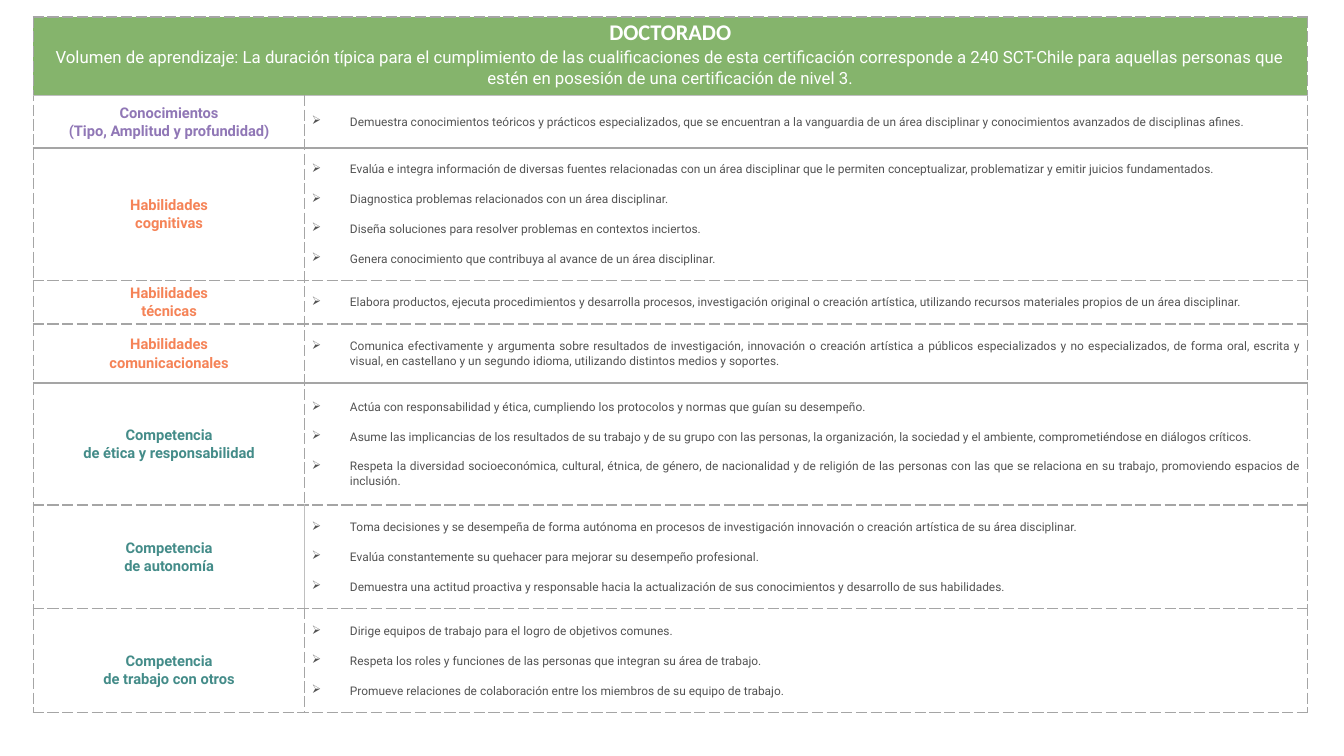
import lxml.etree
import pptx
import pptx.dml.color
import pptx.enum.text
import pptx.oxml.ns
import pptx.util

Pt = pptx.util.Pt
ALIGN = pptx.enum.text.PP_ALIGN
ANCHOR = pptx.enum.text.MSO_ANCHOR
qn = pptx.oxml.ns.qn

COLORS = {
    "header": "85B46C", "white": "FFFFFF", "text": "525252",
    "line": "A5A5A5", "pale_line": "BFBFBF",
    "knowledge": "9077B6", "skill": "F58357", "competence": "448C89",
}
# Colour name, width in points, dash
DASHED = ("line", 1, "dash")
STRONG = ("line", 1.5, "solid")
PALE = ("pale_line", 1, "solid")

HEADER_HEIGHT = 56.1
HEADER_TITLE = "DOCTORADO"
HEADER_TEXT = (
    "Volumen de aprendizaje: La duración típica para el cumplimiento de las cualificaciones "
    "de esta certificación corresponde a 240 SCT-Chile para aquellas personas que estén en "
    "posesión de una certificación de nivel 3."
)
# Height, label colour, label lines, statements, divider, bottom border, label top margin
ROWS = [
    (37.2, "knowledge", ["Conocimientos", "(Tipo, Amplitud y profundidad)"], [
        "Demuestra conocimientos teóricos y prácticos especializados, que se encuentran a la "
        "vanguardia de un área disciplinar y conocimientos avanzados de disciplinas afines.",
    ], DASHED, STRONG, 0),
    (94.6, "skill", ["Habilidades", "cognitivas"], [
        "Evalúa e integra información de diversas fuentes relacionadas con un área disciplinar "
        "que le permiten conceptualizar, problematizar y emitir juicios fundamentados.",
        "Diagnostica problemas relacionados con un área disciplinar.",
        "Diseña soluciones para resolver problemas en contextos inciertos.",
        "Genera conocimiento que contribuya al avance de un área disciplinar.",
    ], DASHED, DASHED, 0),
    (31.4, "skill", ["Habilidades", "técnicas"], [
        "Elabora productos, ejecuta procedimientos y desarrolla procesos, investigación original "
        "o creación artística, utilizando recursos materiales propios de un área disciplinar.",
    ], DASHED, DASHED, 0),
    (42.1, "skill", ["Habilidades", "comunicacionales"], [
        "Comunica efectivamente y argumenta sobre resultados de investigación, innovación o "
        "creación artística a públicos especializados y no especializados, de forma oral, "
        "escrita y visual, en castellano y un segundo idioma, utilizando distintos medios y "
        "soportes.",
    ], DASHED, STRONG, 0),
    (87.2, "competence", ["Competencia", "de ética y responsabilidad"], [
        "Actúa con responsabilidad y ética, cumpliendo los protocolos y normas que guían su "
        "desempeño.",
        "Asume las implicancias de los resultados de su trabajo y de su grupo con las personas, "
        "la organización, la sociedad y el ambiente, comprometiéndose en diálogos críticos.",
        "Respeta la diversidad socioeconómica, cultural, étnica, de género, de nacionalidad y de "
        "religión de las personas con las que se relaciona en su trabajo, promoviendo espacios "
        "de inclusión.",
    ], DASHED, DASHED, 0),
    (73.9, "competence", ["Competencia", "de autonomía"], [
        "Toma decisiones y se desempeña de forma autónoma en procesos de investigación "
        "innovación o creación artística de su área disciplinar.",
        "Evalúa constantemente su quehacer para mejorar su desempeño profesional.",
        "Demuestra una actitud proactiva y responsable hacia la actualización de sus "
        "conocimientos y desarrollo de sus habilidades.",
    ], PALE, DASHED, 0),
    (74.6, "competence", ["Competencia", "de trabajo con otros"], [
        "Dirige equipos de trabajo para el logro de objetivos comunes.",
        "Respeta los roles y funciones de las personas que integran su área de trabajo.",
        "Promueve relaciones de colaboración entre los miembros de su equipo de trabajo.",
    ], DASHED, DASHED, 13),
]


class SlideBuilder:
    def __init__(self, slide):
        self.slide = slide
        self.font = "Roboto"
        self.line_spacing = 1.07
        self.statement_gap = 10.6
        self.bullet_indent = 27.2

    def table(self, left, top, widths, heights):
        frame = self.slide.shapes.add_table(
            len(heights), len(widths), Pt(left), Pt(top), Pt(sum(widths)), Pt(sum(heights)))
        table = frame.table
        table.first_row = table.horz_banding = False
        for column, width in zip(table.columns, widths):
            column.width = Pt(width)
        for row, height in zip(table.rows, heights):
            row.height = Pt(height)
        return table

    def cell(self, cell, borders, margin, top_margin=0, fill=None, anchor=ANCHOR.MIDDLE):
        """Style a cell; borders come in the order left, right, top, bottom."""
        cell.margin_left = cell.margin_right = Pt(margin)
        cell.margin_top, cell.margin_bottom = Pt(top_margin), Pt(0)
        cell.vertical_anchor = anchor
        properties = cell._tc.get_or_add_tcPr()
        for side, (color, width, dash) in zip("LRTB", borders):
            line = lxml.etree.SubElement(properties, qn(f"a:ln{side}"), w=str(Pt(width)))
            solid = lxml.etree.SubElement(line, qn("a:solidFill"))
            lxml.etree.SubElement(solid, qn("a:srgbClr"), val=COLORS[color])
            lxml.etree.SubElement(line, qn("a:prstDash"), val=dash)
        if fill:
            cell.fill.solid()
            cell.fill.fore_color.rgb = pptx.dml.color.RGBColor.from_string(COLORS[fill])
        else:
            cell.fill.background()

    def paragraph(self, cell, text, size, color, bold=False, align=ALIGN.CENTER, font=None):
        frame = cell.text_frame
        para = frame.paragraphs[0] if not frame.text else frame.add_paragraph()
        para.alignment = align
        para.line_spacing = self.line_spacing
        span = para.add_run()
        span.text = text
        span.font.name = font or self.font
        span.font.size = Pt(size)
        span.font.bold = bold
        span.font.color.rgb = pptx.dml.color.RGBColor.from_string(COLORS[color])
        return para

    def statements(self, cell, texts):
        for index, text in enumerate(texts):
            para = self.paragraph(cell, text, 8.5, "text", align=ALIGN.JUSTIFY)
            para.space_before = Pt(self.statement_gap if index else 0)
            properties = para._p.get_or_add_pPr()
            properties.set("marL", str(Pt(self.bullet_indent)))
            properties.set("indent", str(-Pt(self.bullet_indent)))
            lxml.etree.SubElement(properties, qn("a:buChar"), char="➢")


def main():
    deck = pptx.Presentation()
    deck.slide_width, deck.slide_height = Pt(960), Pt(540)
    page = SlideBuilder(deck.slides.add_slide(deck.slide_layouts[6]))

    heights = [HEADER_HEIGHT] + [row[0] for row in ROWS]
    table = page.table(23.8, 12.2, [194, 716], heights)

    header = table.cell(0, 0)
    header.merge(table.cell(0, 1))
    for column in range(2):
        page.cell(table.cell(0, column), [DASHED, DASHED, DASHED, PALE], 3.6,
                  fill="header", anchor=ANCHOR.TOP)
    page.paragraph(header, HEADER_TITLE, 16, "white", bold=True, font="Calibri")
    page.paragraph(header, HEADER_TEXT, 12, "white")

    above = PALE
    for number, row in enumerate(ROWS, start=1):
        _, color, label_lines, texts, divider, below, label_top = row
        label, content = table.cell(number, 0), table.cell(number, 1)
        page.cell(label, [DASHED, divider, above, below], 3.6, top_margin=label_top)
        page.cell(content, [divider, DASHED, above, below], 5)
        for text in label_lines:
            page.paragraph(label, text, 10.5, color, bold=True)
        page.statements(content, texts)
        above = below

    deck.save("out.pptx")


if __name__ == "__main__":
    main()
